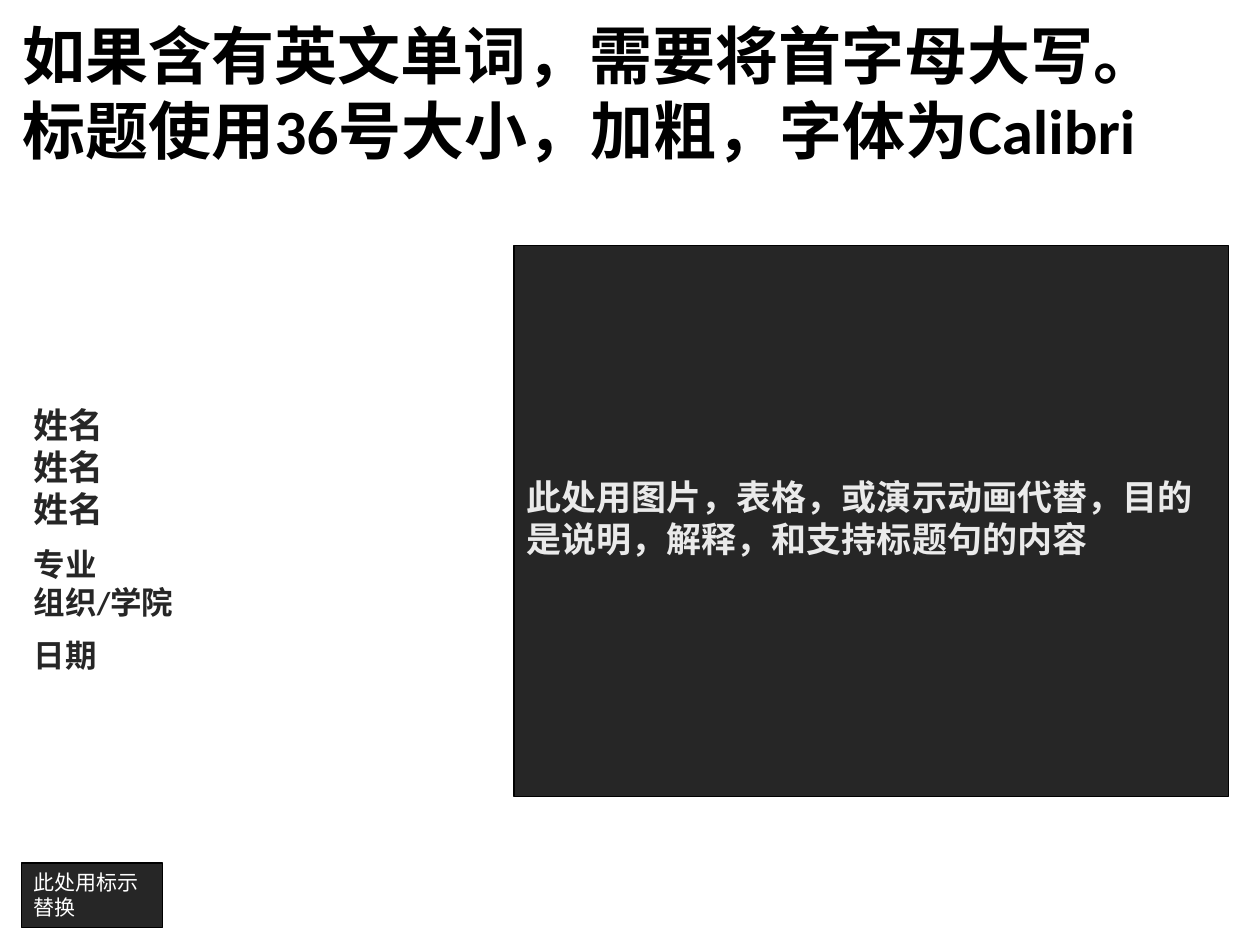
import dataclasses

import pptx
import pptx.dml.color
import pptx.enum.shapes
import pptx.enum.text
import pptx.util

Inches = pptx.util.Inches
Pt = pptx.util.Pt
Anchor = pptx.enum.text.MSO_ANCHOR


@dataclasses.dataclass(frozen=True)
class Theme:
    font: str = "Calibri"
    black: str = "000000"
    dark: str = "262626"
    light: str = "EAEAEA"
    white: str = "FFFFFF"
    title_size: int = 36
    body_size: int = 20
    detail_size: int = 18
    label_size: int = 12
    line_width: float = 0.75


@dataclasses.dataclass(frozen=True)
class Line:
    text: str
    size: int
    color: str
    bold: bool = True
    space_before: int = 0


@dataclasses.dataclass(frozen=True)
class Area:
    left: float
    top: float
    width: float
    height: float

    def lengths(self) -> tuple:
        return tuple(Inches(value) for value in dataclasses.astuple(self))


@dataclasses.dataclass(frozen=True)
class Panel:
    area: Area
    line: Line
    anchor: Anchor
    bottom_inset: float = 0.05


THEME = Theme()

TITLE_AREA = Area(0.08, 0.08, 9.67, 1.31)
TITLE = Line(
    "如果含有英文单词，需要将首字母大写。标题使用36号大小，加粗，字体为Calibri",
    THEME.title_size,
    THEME.black,
)

AUTHOR_AREA = Area(0.17, 3.17, 3.67, 2.28)
AUTHOR_LINES = [Line("姓名", THEME.body_size, THEME.dark)] * 3 + [
    Line("专业", THEME.detail_size, THEME.dark, space_before=9),
    Line("组织/学院", THEME.detail_size, THEME.dark),
    Line("日期", THEME.detail_size, THEME.dark, space_before=9),
]

PANELS = [
    Panel(
        Area(4.08, 1.95, 5.67, 4.37),
        Line(
            "此处用图片，表格，或演示动画代替，目的是说明，解释，和支持标题句的内容",
            THEME.body_size,
            THEME.light,
        ),
        Anchor.MIDDLE,
        bottom_inset=0.11,
    ),
    Panel(
        Area(0.17, 6.85, 1.12, 0.51),
        Line("此处用标示替换", THEME.label_size, THEME.white, bold=False),
        Anchor.TOP,
    ),
]


def rgb(color: str) -> pptx.dml.color.RGBColor:
    return pptx.dml.color.RGBColor.from_string(color)


def write_lines(shape, lines: list[Line], anchor: Anchor, top: float, bottom: float) -> None:
    frame = shape.text_frame
    frame.text = "\n".join(line.text for line in lines)
    frame.word_wrap = True
    frame.auto_size = pptx.enum.text.MSO_AUTO_SIZE.NONE
    frame.vertical_anchor = anchor
    frame.margin_left = frame.margin_right = Inches(0.1)
    frame.margin_top, frame.margin_bottom = Inches(top), Inches(bottom)
    for para, line in zip(frame.paragraphs, lines):
        para.alignment = pptx.enum.text.PP_ALIGN.LEFT
        para.space_before = Pt(line.space_before)
        for span in para.runs:
            span.font.name = THEME.font
            span.font.size = Pt(line.size)
            span.font.bold = line.bold
            span.font.color.rgb = rgb(line.color)


def draw_title(page) -> None:
    title = page.shapes.title
    title.left, title.top, title.width, title.height = TITLE_AREA.lengths()
    write_lines(title, [TITLE], Anchor.TOP, 0.05, 0.05)


def draw_authors(page) -> None:
    box = page.shapes.add_textbox(*AUTHOR_AREA.lengths())
    write_lines(box, AUTHOR_LINES, Anchor.TOP, 0.03, 0.03)


def draw_panel(page, panel: Panel) -> None:
    box = page.shapes.add_shape(
        pptx.enum.shapes.MSO_SHAPE.RECTANGLE, *panel.area.lengths()
    )
    box.shadow.inherit = False
    box.fill.solid()
    box.fill.fore_color.rgb = rgb(THEME.dark)
    box.line.color.rgb = rgb(THEME.black)
    box.line.width = Pt(THEME.line_width)
    write_lines(box, [panel.line], panel.anchor, 0.05, panel.bottom_inset)


def main() -> None:
    deck = pptx.Presentation()
    deck.slide_width, deck.slide_height = Inches(10), Inches(7.5)
    page = deck.slides.add_slide(deck.slide_layouts.get_by_name("Title Only"))
    page.background.fill.solid()
    page.background.fill.fore_color.rgb = rgb(THEME.white)
    draw_title(page)
    draw_authors(page)
    for panel in PANELS:
        draw_panel(page, panel)
    deck.save("out.pptx")


if __name__ == "__main__":
    main()
